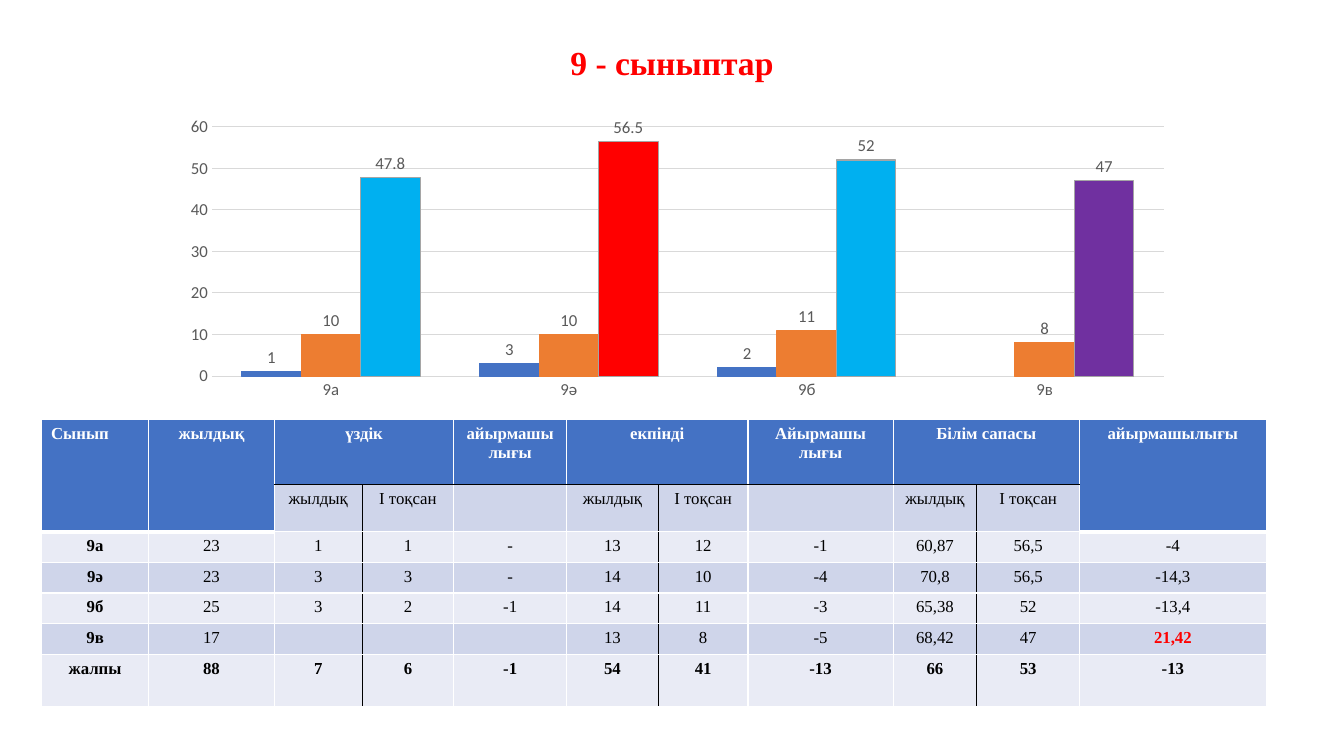
from dataclasses import dataclass
from lxml import etree
from pptx import Presentation
from pptx import util as u
from pptx.chart import data as cd
from pptx.dml import color as co
from pptx.enum import chart as ec
from pptx.enum import text as et
from pptx.oxml import ns


@dataclass(frozen=True)
class Theme:
    """Colours, fonts and type sizes of the slide."""
    serif: str = "Times New Roman"
    sans: str = "Calibri"
    big: int = 24
    small: int = 12
    red: str = "FF0000"
    blue: str = "4472C4"
    orange: str = "ED7D31"
    sky: str = "00B0F0"
    plum: str = "7030A0"
    gray: str = "A5A5A5"
    pale: str = "D9D9D9"
    ink: str = "595959"
    black: str = "000000"
    white: str = "FFFFFF"
    dark: str = "CFD5EA"
    light: str = "E9EBF5"


T = Theme()
NAMES = ["9а", "9ә", "9б", "9в"]
SERIES = [
    ("Series 1", [1, 3, 2, None], T.blue, T.blue, {}),
    ("Series 2", [10, 10, 11, 8], T.orange, T.orange, {}),
    ("Series 3", [47.8, 56.5, 52, 47], T.sky, T.gray, {1: T.red, 3: T.plum}),
]
PAIR = ["жылдық", "І тоқсан"]
ROWS = [
    ["Сынып", "жылдық", "үздік", "", "айырмашылығы", "екпінді", "",
     "Айырмашы\nлығы", "Білім сапасы", "", "айырмашылығы"],
    ["", "", *PAIR, "", *PAIR, "", *PAIR, ""],
    ["9а", "23", "1", "1", "-", "13", "12", "-1", "60,87", "56,5", "-4"],
    ["9ә", "23", "3", "3", "-", "14", "10", "-4", "70,8", "56,5", "-14,3"],
    ["9б", "25", "3", "2", "-1", "14", "11", "-3", "65,38", "52", "-13,4"],
    ["9в", "17", "", "", "", "13", "8", "-5", "68,42", "47", "21,42"],
    ["жалпы", "88", "7", "6", "-1", "54", "41", "-13", "66", "53", "-13"],
]
WIDTHS = [76.3, 90, 62.6, 65.5, 80.6, 65.5, 64.1, 103.7, 59.8, 73.4, 133.3]
HEIGHTS = [46.5, 33.5, 21.9, 21.9, 21.9, 21.9, 37.6]
TALL = (0, 1, 10)
SPLIT = (2, 5, 8)


def rgb(hue):
    """Turn a hex string into a colour."""
    return co.RGBColor.from_string(hue)


def put(obj, vals):
    """Set attributes from a dict."""
    for key, val in vals.items():
        setattr(obj, key, val)


def style(font, face, size, hue, bold=False):
    """Format a font."""
    put(font, {"name": face, "size": u.Pt(size), "bold": bold})
    font.color.rgb = rgb(hue)


def stroke(line, hue):
    """Draw a thin line in one colour."""
    line.color.rgb = rgb(hue)
    line.width = u.Pt(0.75)


def paint(fill, hue):
    """Fill with one colour."""
    fill.solid()
    fill.fore_color.rgb = rgb(hue)


def title(slide, box):
    """Place the heading."""
    frame = slide.shapes.add_textbox(*map(u.Pt, box)).text_frame
    put(frame, {"word_wrap": True, "vertical_anchor": et.MSO_ANCHOR.MIDDLE})
    para = frame.paragraphs[0]
    put(para, {"text": "9 - сыныптар", "alignment": et.PP_ALIGN.CENTER,
               "line_spacing": 0.9})
    style(para.runs[0].font, T.serif, T.big, T.red, True)


def layout(chart, frame):
    """Fix the inner plot area as shares of the chart."""
    area = chart._chartSpace.chart.plotArea
    for old in area.findall(ns.qn("c:layout")):
        area.remove(old)
    node = etree.Element(ns.qn("c:layout"))
    area.insert(0, node)
    man = etree.SubElement(node, ns.qn("c:manualLayout"))
    tags = ["layoutTarget", "xMode", "yMode", "x", "y", "w", "h"]
    for tag, val in zip(tags, ["inner", "edge", "edge", *frame]):
        etree.SubElement(man, ns.qn("c:" + tag)).set("val", str(val))


def columns(slide, box):
    """Place the column chart."""
    data = cd.CategoryChartData()
    data.categories = NAMES
    for name, vals, *_ in SERIES:
        data.add_series(name, vals)
    kind = ec.XL_CHART_TYPE.COLUMN_CLUSTERED
    chart = slide.shapes.add_chart(kind, *map(u.Pt, box), data).chart
    put(chart, {"has_legend": False, "has_title": False})
    style(chart.font, T.sans, T.small, T.ink)
    layout(chart, (0.084, 0.121, 0.86, 0.793))
    cat, val = chart.category_axis, chart.value_axis
    for axis in (cat, val):
        put(axis, {"major_tick_mark": ec.XL_TICK_MARK.NONE,
                   "minor_tick_mark": ec.XL_TICK_MARK.NONE})
        style(axis.tick_labels.font, T.sans, T.small, T.ink)
    stroke(cat.format.line, T.pale)
    put(val, {"minimum_scale": 0, "maximum_scale": 60, "major_unit": 10,
              "has_major_gridlines": True})
    val.format.line.fill.background()
    stroke(val.major_gridlines.format.line, T.pale)
    plot = chart.plots[0]
    put(plot, {"gap_width": 100, "overlap": 0, "vary_by_categories": False})
    for ser, (_, _, hue, edge, spots) in zip(plot.series, SERIES):
        ser.invert_if_negative = False
        looks = [(ser.format, hue)]
        looks += [(ser.points[i].format, spot) for i, spot in spots.items()]
        for look, tone in looks:
            paint(look.fill, tone)
            stroke(look.line, edge)
        tags = ser.data_labels
        put(tags, {"show_value": True,
                   "position": ec.XL_LABEL_POSITION.OUTSIDE_END})
        style(tags.font, T.sans, T.small, T.ink)


def edges(cell, row, col):
    """Draw the four borders of a cell."""
    inner = row > 0 and col not in TALL
    head = col not in TALL
    dark = {"lnL": inner and col - 1 in SPLIT, "lnR": inner and col in SPLIT,
            "lnT": row == 1 and head, "lnB": row == 0 and head}
    props = cell._tc.get_or_add_tcPr()
    for tag, black in dark.items():
        thick = tag == "lnB" and row < 2 and not head
        line = etree.SubElement(props, ns.qn("a:" + tag))
        line.set("w", str(u.Pt(3 if thick else 1)))
        fill = etree.SubElement(line, ns.qn("a:solidFill"))
        tone = etree.SubElement(fill, ns.qn("a:srgbClr"))
        tone.set("val", T.black if black else T.white)


def entry(cell, row, col, words):
    """Fill and write one cell."""
    top = row == 0 or (row == 1 and col in TALL)
    put(cell, {"text": words, "margin_left": u.Pt(6.75),
               "margin_right": u.Pt(6.75)})
    edges(cell, row, col)
    paint(cell.fill, T.blue if top else T.dark if row % 2 else T.light)
    hot = words == "21,42"
    bold = top or hot or row == len(ROWS) - 1 or (row > 1 and col == 0)
    hue = T.white if top else T.red if hot else T.black
    for para in cell.text_frame.paragraphs:
        if row or col:
            para.alignment = et.PP_ALIGN.CENTER
        for run in para.runs:
            style(run.font, T.serif, T.small, hue, bold)
        if not words:
            end = para._p.get_or_add_endParaRPr()
            end.set("sz", str(T.small * 100))


def grid(slide, box):
    """Place the table of results."""
    size = len(ROWS), len(WIDTHS)
    table = slide.shapes.add_table(*size, *map(u.Pt, box)).table
    put(table, {"first_row": False, "horz_banding": False})
    for col, wide in zip(table.columns, WIDTHS):
        col.width = u.Pt(wide)
    for row, high in zip(table.rows, HEIGHTS):
        row.height = u.Pt(high)
    for row, line in enumerate(ROWS):
        for col, words in enumerate(line):
            entry(table.cell(row, col), row, col, words)
    for col in TALL:
        table.cell(0, col).merge(table.cell(1, col))
    for col in SPLIT:
        table.cell(0, col).merge(table.cell(0, col + 1))


def main():
    """Build and save the slide."""
    deck = Presentation()
    put(deck, {"slide_width": u.Pt(960), "slide_height": u.Pt(540)})
    slide = deck.slides.add_slide(deck.slide_layouts[6])
    title(slide, (66, 29, 828, 34.5))
    columns(slide, (85, 63.4, 790.5, 224.6))
    grid(slide, (29.8, 299.8, sum(WIDTHS), sum(HEIGHTS)))
    deck.save("out.pptx")


if __name__ == "__main__":
    main()
